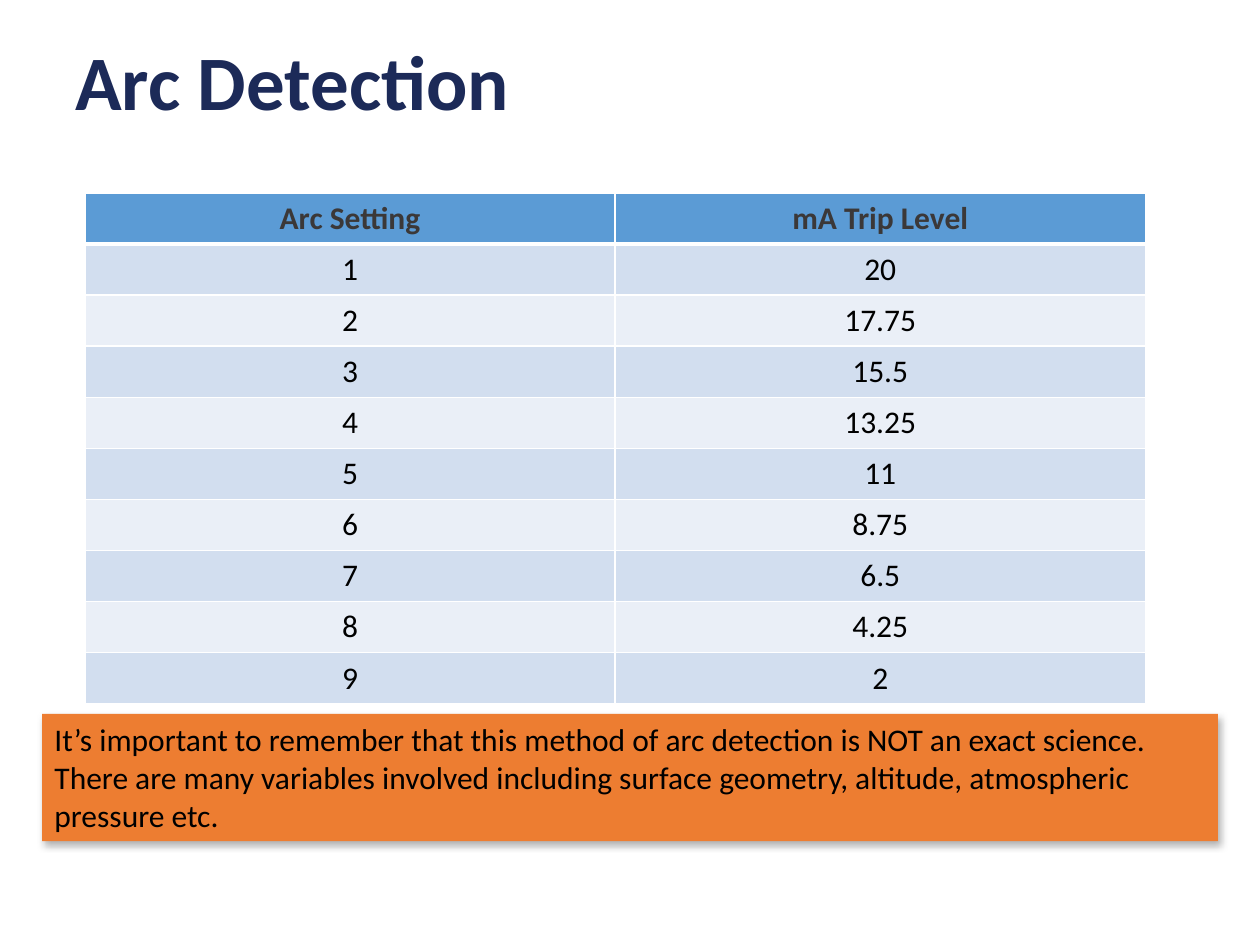
from lxml.etree import SubElement
from pptx import Presentation
from pptx.dml.color import RGBColor
from pptx.enum.shapes import MSO_SHAPE
from pptx.enum.text import MSO_ANCHOR, PP_ALIGN
from pptx.oxml.ns import qn
from pptx.util import Pt

TITLE = "Arc Detection"
HEADER = ("Arc Setting", "mA Trip Level")
TRIP_LEVELS = ("20", "17.75", "15.5", "13.25", "11", "8.75", "6.5", "4.25", "2")
NOTE = (
    "It’s important to remember that this method of arc detection is NOT an exact science. "
    "There are many variables involved including surface geometry, altitude, atmospheric "
    "pressure etc."
)

NAVY = RGBColor(0x1C, 0x2A, 0x58)
DARK_GREY = RGBColor(0x3B, 0x38, 0x38)
BLACK = RGBColor(0, 0, 0)
WHITE = RGBColor(0xFF, 0xFF, 0xFF)
BLUE = RGBColor(0x5B, 0x9B, 0xD5)
BANDS = (RGBColor(0xD2, 0xDE, 0xEF), RGBColor(0xEA, 0xEF, 0xF7))
ORANGE = RGBColor(0xED, 0x7D, 0x31)

TITLE_FONT = {"name": "Calibri", "size": Pt(44), "bold": True}
HEADER_FONT = {"name": "Calibri", "size": Pt(18), "bold": True}
BODY_FONT = {"name": "Calibri", "size": Pt(18), "bold": False}

TABLE_LEFT, TABLE_TOP = 48.5, 110.2
COLUMN_WIDTH, ROW_HEIGHT = 303, 29.2


def write(frame, text, font, color, align=PP_ALIGN.LEFT):
    paragraph = frame.paragraphs[0]
    paragraph.alignment = align
    run = paragraph.add_run()
    run.text = text
    for name, value in font.items():
        setattr(run.font, name, value)
    run.font.color.rgb = color
    return paragraph


def set_borders(cell, widths):
    """Draw white borders; widths maps L, R, T and B to points. Call before filling."""
    properties = cell._tc.get_or_add_tcPr()
    for side, width in widths.items():
        line = SubElement(properties, qn(f"a:ln{side}"), w=str(Pt(width)))
        fill = SubElement(line, qn("a:solidFill"))
        SubElement(fill, qn("a:srgbClr"), val=str(WHITE))


def add_shadow(shape):
    shape.shadow.inherit = False
    effects = shape._element.spPr.find(qn("a:effectLst"))
    shadow = SubElement(
        effects, qn("a:outerShdw"), blurRad=str(Pt(4.5)), dist=str(Pt(2.6)),
        dir=str(53 * 60000), algn="tl", rotWithShape="0",
    )
    color = SubElement(shadow, qn("a:srgbClr"), val=str(BLACK))
    SubElement(color, qn("a:alpha"), val="30000")


def add_title(slide):
    frame = slide.shapes.add_textbox(Pt(36), Pt(21.6), Pt(648), Pt(90)).text_frame
    frame.word_wrap = True
    write(frame, TITLE, TITLE_FONT, NAVY).line_spacing = 0.9


def add_trip_table(slide):
    rows = [HEADER] + [(str(n), level) for n, level in enumerate(TRIP_LEVELS, 1)]
    columns = len(HEADER)
    table = slide.shapes.add_table(
        len(rows), columns, Pt(TABLE_LEFT), Pt(TABLE_TOP),
        Pt(COLUMN_WIDTH * columns), Pt(ROW_HEIGHT * len(rows)),
    ).table
    for r, values in enumerate(rows):
        table.rows[r].height = Pt(ROW_HEIGHT)
        is_header = r == 0
        font, color = (HEADER_FONT, DARK_GREY) if is_header else (BODY_FONT, BLACK)
        borders = {"L": 1, "R": 1, "T": 3 if r == 1 else 1, "B": 3 if is_header else 1}
        for c, value in enumerate(values):
            cell = table.cell(r, c)
            set_borders(cell, borders)
            cell.fill.solid()
            cell.fill.fore_color.rgb = BLUE if is_header else BANDS[(r - 1) % 2]
            write(cell.text_frame, value, font, color, PP_ALIGN.CENTER)


def add_note(slide):
    note = slide.shapes.add_shape(
        MSO_SHAPE.RECTANGLE, Pt(24), Pt(408), Pt(672), Pt(72.7)
    )
    note.fill.solid()
    note.fill.fore_color.rgb = ORANGE
    note.line.fill.background()
    add_shadow(note)
    note.text_frame.word_wrap = True
    note.text_frame.vertical_anchor = MSO_ANCHOR.TOP
    write(note.text_frame, NOTE, BODY_FONT, BLACK)


def main():
    presentation = Presentation()
    presentation.slide_width, presentation.slide_height = Pt(720), Pt(540)
    slide = presentation.slides.add_slide(presentation.slide_layouts[6])
    add_title(slide)
    add_trip_table(slide)
    add_note(slide)
    presentation.save("out.pptx")


if __name__ == "__main__":
    main()
